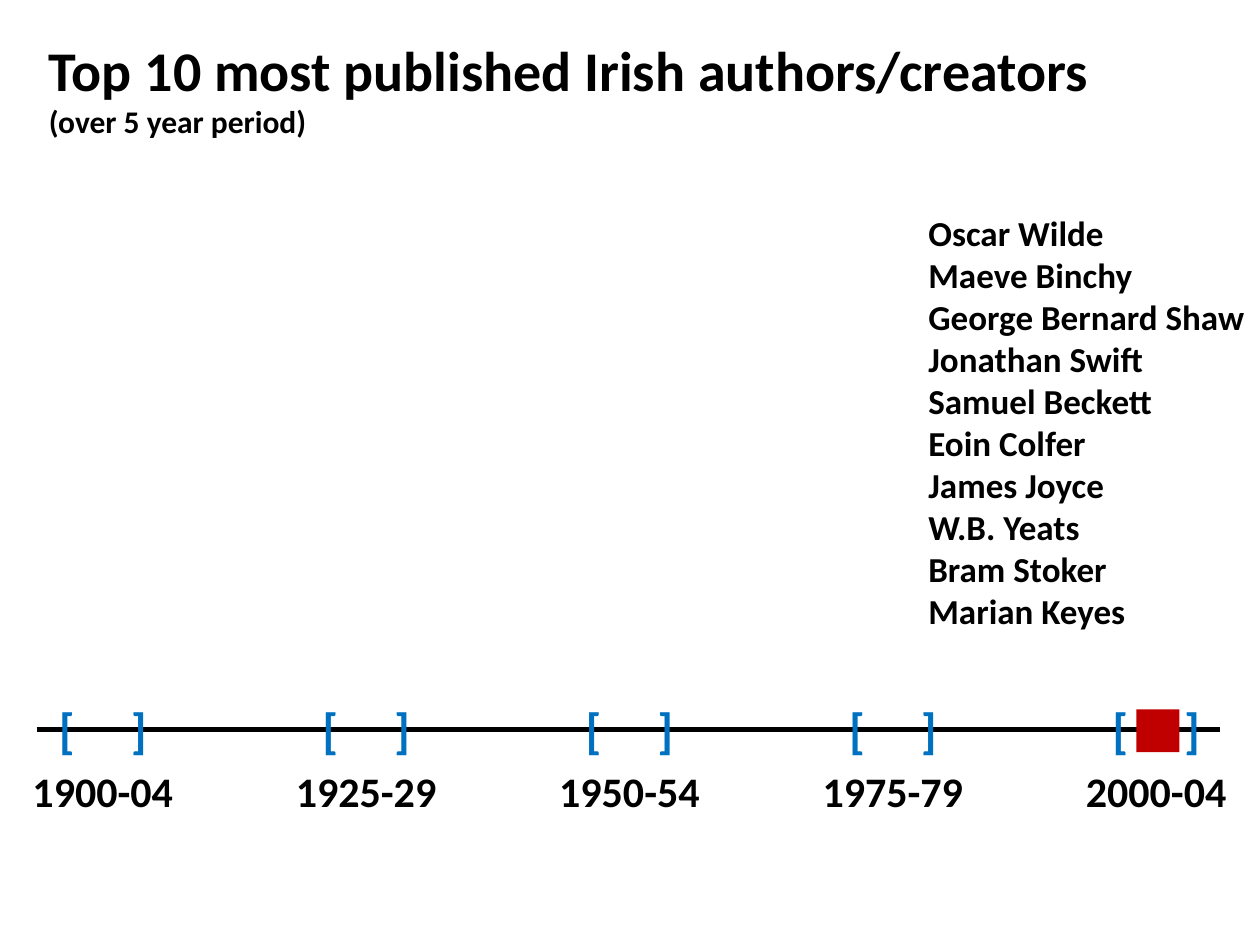
from lxml import etree
from pptx import Presentation
from pptx import util as u
from pptx.dml.color import RGBColor
from pptx.enum import shapes, text
from pptx.oxml.ns import qn

WIDTH, HEIGHT = 10, 7.5
FONT = "Calibri"
COLORS = {"ink": "000000", "bracket": "0070C0", "marker": "C00000"}
PERIODS = ["1900-04", "1925-29", "1950-54", "1975-79", "2000-04"]
AUTHORS = [
    "Oscar Wilde", "Maeve Binchy", "George Bernard Shaw", "Jonathan Swift",
    "Samuel Beckett", "Eoin Colfer", "James Joyce", "W.B. Yeats",
    "Bram Stoker", "Marian Keyes",
]
FIRST_CENTER, PERIOD_PITCH = 0.82, 2.09
AXIS_Y = 5.79
BRACKET_GAP = 0.57


def color(name):
    """Return the named colour of the palette."""
    return RGBColor.from_string(COLORS[name])


def add_text(slide, box, lines, sizes, ink="ink"):
    """Add bold lines of text, one size per line, and return the text box."""
    label = slide.shapes.add_textbox(*map(u.Inches, box))
    frame = label.text_frame
    frame.text = "\n".join(lines)
    frame.word_wrap = False
    frame.auto_size = text.MSO_AUTO_SIZE.SHAPE_TO_FIT_TEXT
    for paragraph, size in zip(frame.paragraphs, sizes):
        for run in paragraph.runs:
            run.font.name = FONT
            run.font.size = u.Pt(size)
            run.font.bold = True
            run.font.color.rgb = color(ink)
    return label


def add_axis(slide):
    """Draw the horizontal line of the timeline."""
    axis = slide.shapes.add_connector(
        shapes.MSO_CONNECTOR.STRAIGHT,
        *map(u.Inches, (0.29, AXIS_Y, 9.68, AXIS_Y)))
    axis.line.color.rgb = color("ink")
    axis.line.width = u.Pt(3)
    etree.SubElement(axis._element.spPr, qn("a:effectLst"))


def add_brackets(slide, center):
    """Add a pair of brackets around a period on the axis."""
    brackets = add_text(slide, (center - 0.45, AXIS_Y - 0.29, 0.9, 0.57),
                        ["[\t]"], [28], "bracket")
    properties = brackets.text_frame.paragraphs[0]._p.get_or_add_pPr()
    stops = etree.SubElement(properties, qn("a:tabLst"))
    etree.SubElement(stops, qn("a:tab"), pos=str(u.Inches(BRACKET_GAP)), algn="l")


def add_period(slide, column, years):
    """Add the brackets and the years of one column of the timeline."""
    center = FIRST_CENTER + column * PERIOD_PITCH
    add_brackets(slide, center)
    add_text(slide, (center - 0.66, 6.03, 1.33, 0.5), [years], [24])


def add_marker(slide, center, side):
    """Add the square that marks the current period."""
    marker = slide.shapes.add_shape(
        shapes.MSO_SHAPE.RECTANGLE,
        *map(u.Inches, (center - side / 2, AXIS_Y + 0.01 - side / 2, side, side)))
    marker.shadow.inherit = False
    marker.fill.solid()
    marker.fill.fore_color.rgb = color("marker")
    marker.line.fill.background()


def main():
    """Build the timeline slide and save it."""
    deck = Presentation()
    deck.slide_width, deck.slide_height = u.Inches(WIDTH), u.Inches(HEIGHT)
    slide = deck.slides.add_slide(deck.slide_layouts[6])
    add_axis(slide)
    for column, years in enumerate(PERIODS):
        add_period(slide, column, years)
    add_text(slide, (0.29, 0.23, 8.53, 0.94),
             ["Top 10 most published Irish authors/creators",
              "(over 5 year period)"], [32, 18])
    last_center = FIRST_CENTER + (len(PERIODS) - 1) * PERIOD_PITCH
    add_marker(slide, last_center + 0.01, 0.34)
    add_text(slide, (7.27, 1.63, 2.73, 3.47), AUTHORS, [20] * len(AUTHORS))
    deck.save("out.pptx")


if __name__ == "__main__":
    main()
